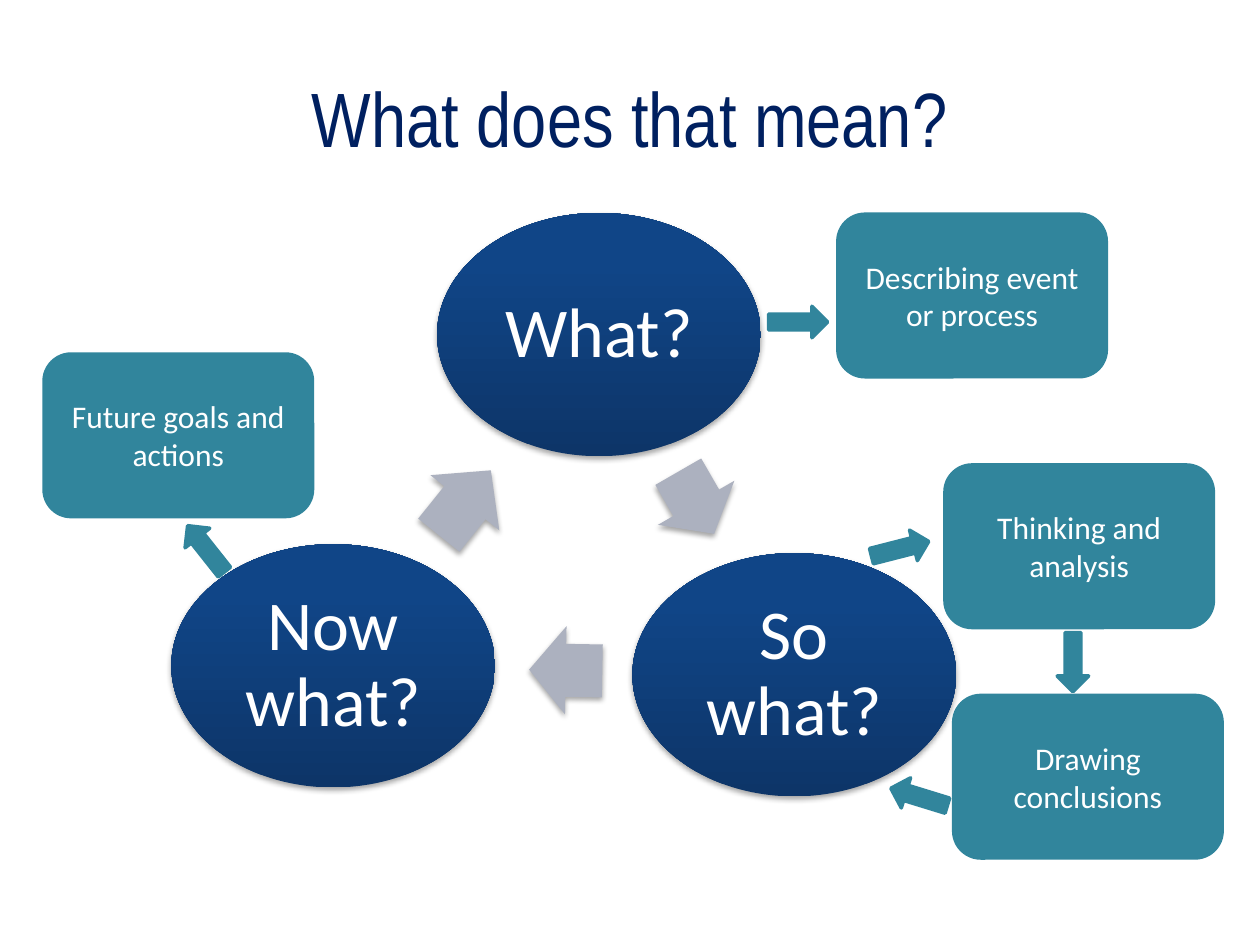
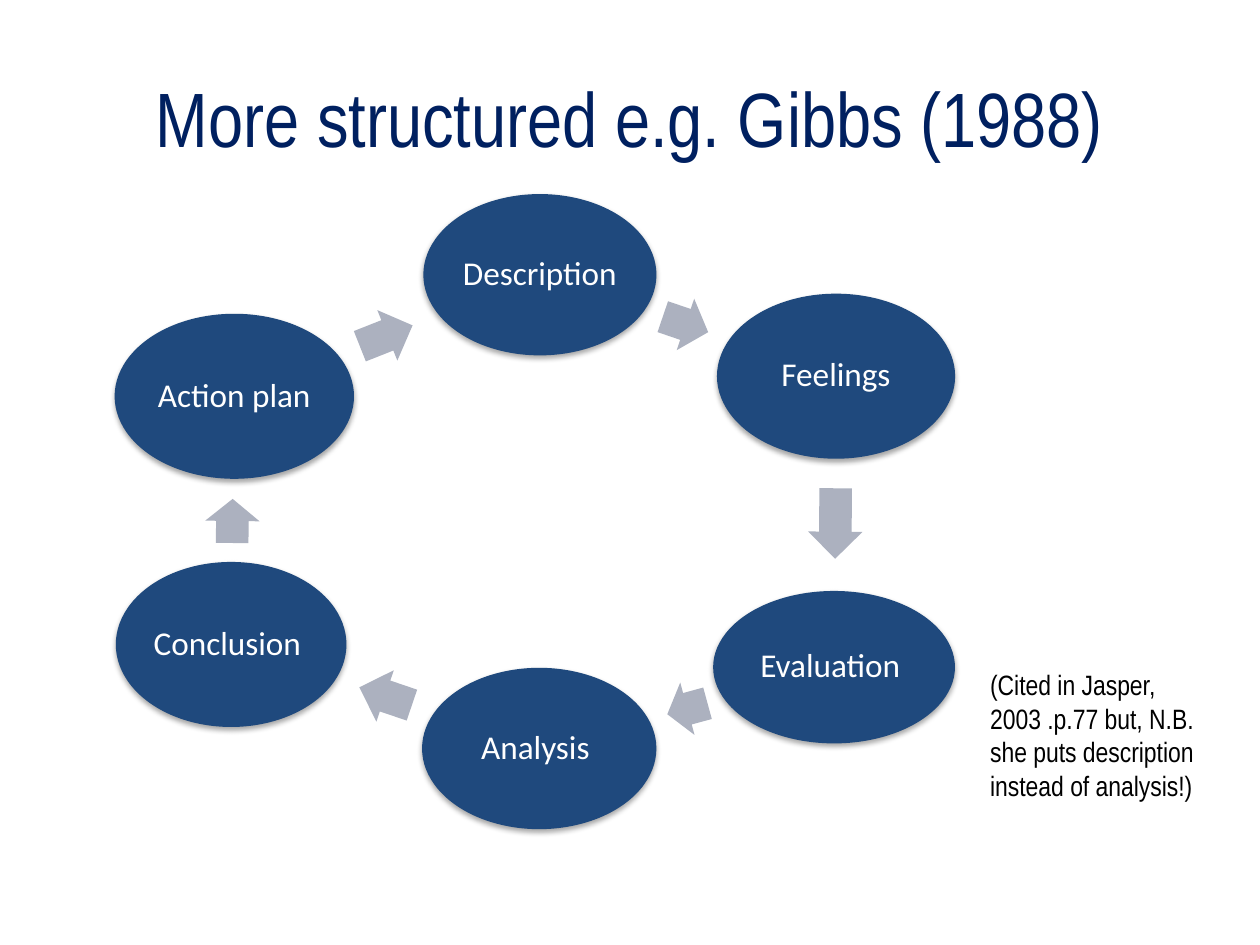
from lxml import etree
from pptx import Presentation
from pptx.dml.color import RGBColor
from pptx.enum import shapes, text
from pptx.oxml import ns
from pptx.util import Pt

NAVY, WHITE, BLACK = "002060", "FFFFFF", "000000"
BLUE, TEAL, GREY = "1F497D", "31859C", "ACB1BF"
OVAL_GRADIENT = [("0D3568", 0), ("104587", 0.8)]
TITLE_FONT, BODY_FONT = "Arial Narrow", "Calibri"
STAGE_SIZE = (185, 139)
NOTE_SIZE = (153.4, 92.9)
POINTER_SIZE = (33.8, 18)

STAGES = [
    ("What?", 249.8, 121.7),
    ("So what?", 361.4, 316.1),
    ("Now what?", 97.9, 311),
]
STAGE_ARROWS = [
    (377.3, 262.1, 41, 60),
    (302.4, 357.8, 41.8, 181),
    (241.9, 262.1, 47.5, 308.7),
]
NOTES = [
    ("Thinking and analysis", 540, 265.7),
    ("Drawing conclusions", 545, 397.4),
    ("Describing event or process", 478.8, 122.4),
    ("Future goals and actions", 25.2, 202.3),
]
POINTERS = [
    (497.5, 304.6, 345.6),
    (596.2, 369.4, 90),
    (508.3, 446.4, 197.1),
    (439.2, 175, 0),
    (100.8, 304.6, 231.6),
]
GIBBS_STEPS = [
    ("Description ", 241.9, 110.9, 133.2, 92.2),
    ("Feelings", 409.7, 167.8, 136.1, 94.3),
    ("Evaluation ", 407.5, 337.7, 138.2, 87.1),
    ("Analysis ", 241.2, 381.6, 133.9, 92.2),
    ("Conclusion ", 66.2, 321.1, 131.8, 94.3),
    ("Action plan", 65.5, 179.3, 136.8, 94.3),
]
GIBBS_ARROWS = [
    (378, 169.9, 27.4, 18.8),
    (457.2, 283.7, 40.3, 90.5),
    (380.9, 389.5, 23.8, 164.7),
    (204.5, 382.3, 31.7, 198.7),
    (120.2, 282.2, 25.2, 270.7),
    (204.5, 176.4, 32.4, 338.4),
]


def rgb(value):
    return RGBColor.from_string(value)


def write(frame, words, size, font, color, align, anchor, spacing=1.0):
    frame.text = words
    frame.word_wrap = True
    frame.vertical_anchor = anchor
    paragraph = frame.paragraphs[0]
    paragraph.alignment = align
    paragraph.line_spacing = spacing
    for run in paragraph.runs:
        run.font.size = Pt(size)
        run.font.name = font
        run.font.color.rgb = rgb(color)


def write_centred(frame, words, size, font=BODY_FONT, color=WHITE, spacing=1.0):
    write(frame, words, size, font, color,
          text.PP_ALIGN.CENTER, text.MSO_ANCHOR.MIDDLE, spacing)


def add_titled_slide(deck, words):
    slide = deck.slides.add_slide(deck.slide_layouts[5])
    title = slide.shapes.title
    title.left, title.top, title.width, title.height = map(Pt, (36, 21.6, 648, 90))
    write_centred(title.text_frame, words, 44, TITLE_FONT, NAVY)
    return slide


def add_plain(slide, preset, place, fill, outline=None):
    shape = slide.shapes.add_shape(preset, *map(Pt, place))
    shape.shadow.inherit = False
    shape.fill.solid()
    shape.fill.fore_color.rgb = rgb(fill)
    if outline:
        shape.line.color.rgb = rgb(outline)
        shape.line.width = Pt(2)
    else:
        shape.line.fill.background()
    return shape


def add_soft_shadow(shape):
    effects = shape._element.spPr.find(ns.qn("a:effectLst"))
    shadow = etree.SubElement(
        effects, ns.qn("a:outerShdw"), blurRad=str(Pt(3.1)), dist=str(Pt(1.8)),
        dir="5400000", rotWithShape="0")
    color = etree.SubElement(shadow, ns.qn("a:srgbClr"), val=BLACK)
    etree.SubElement(color, ns.qn("a:alpha"), val="35000")


def add_oval(slide, words, place, size, inset):
    oval = add_plain(slide, shapes.MSO_SHAPE.OVAL, place, BLUE)
    add_soft_shadow(oval)
    frame = oval.text_frame
    frame.margin_left = frame.margin_right = Pt(inset)
    frame.margin_top = frame.margin_bottom = Pt(inset)
    write_centred(frame, words, size, spacing=0.9)
    return oval


def shade(oval):
    oval.fill.gradient()
    oval.fill.gradient_angle = 90
    for stop, (color, position) in zip(oval.fill.gradient_stops, OVAL_GRADIENT):
        stop.color.rgb = rgb(color)
        stop.position = position


def add_cycle_arrow(slide, left, top, width, height, angle):
    arrow = add_plain(slide, shapes.MSO_SHAPE.RIGHT_ARROW,
                      (left, top, width, height), GREY)
    arrow.adjustments[0] = 0.6
    arrow.adjustments[1] = 0.5
    arrow.rotation = angle
    return arrow


def add_note(slide, words, left, top):
    note = add_plain(slide, shapes.MSO_SHAPE.ROUNDED_RECTANGLE,
                     (left, top, *NOTE_SIZE), TEAL, TEAL)
    write_centred(note.text_frame, words, 18)


def add_pointer(slide, left, top, angle):
    pointer = add_plain(slide, shapes.MSO_SHAPE.RIGHT_ARROW,
                        (left, top, *POINTER_SIZE), TEAL, TEAL)
    pointer.rotation = angle


def add_citation(slide, words, place):
    citation = slide.shapes.add_textbox(*map(Pt, place))
    write(citation.text_frame, words, 16, TITLE_FONT, BLACK,
          text.PP_ALIGN.LEFT, text.MSO_ANCHOR.TOP)
    citation.text_frame.auto_size = text.MSO_AUTO_SIZE.SHAPE_TO_FIT_TEXT


def build_meaning(deck):
    slide = add_titled_slide(deck, "What does that mean?")
    for words, left, top in STAGES:
        shade(add_oval(slide, words, (left, top, *STAGE_SIZE), 40, 4.3))
    for left, top, width, angle in STAGE_ARROWS:
        add_soft_shadow(add_cycle_arrow(slide, left, top, width, 50.4, angle))
    for note in NOTES:
        add_note(slide, *note)
    for pointer in POINTERS:
        add_pointer(slide, *pointer)


def build_gibbs(deck):
    slide = add_titled_slide(deck, "More structured e.g. Gibbs (1988)")
    for words, *place in GIBBS_STEPS:
        add_oval(slide, words, place, 19, 2)
    for left, top, width, angle in GIBBS_ARROWS:
        add_cycle_arrow(slide, left, top, width, 31, angle)
    add_citation(
        slide,
        "(Cited in Jasper, 2003 .p.77 but, N.B. she puts description instead of analysis!)",
        (558.7, 378, 136.1, 85))


def main():
    deck = Presentation()
    deck.slide_width, deck.slide_height = Pt(720), Pt(540)
    build_meaning(deck)
    build_gibbs(deck)
    deck.save("out.pptx")


if __name__ == "__main__":
    main()
